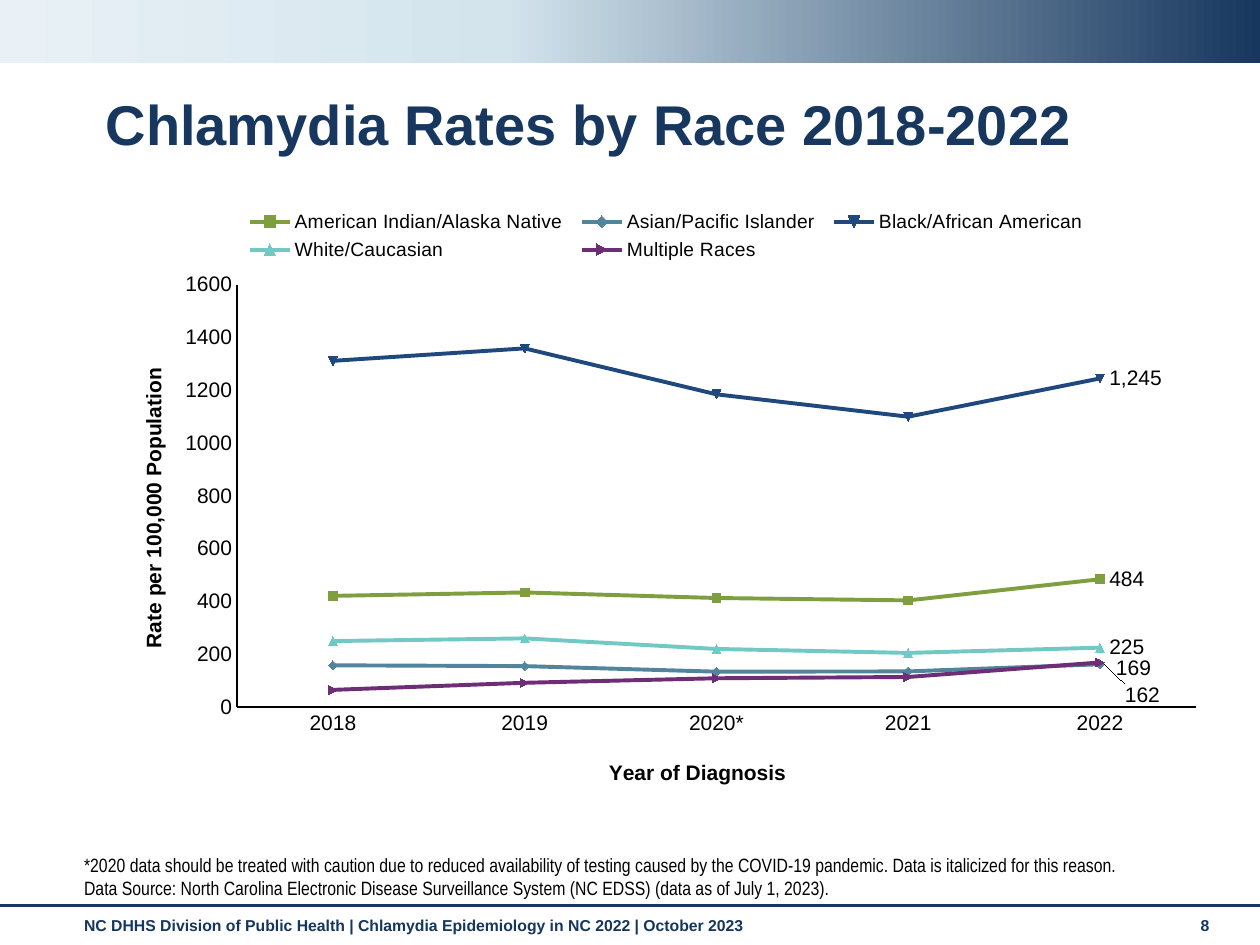
from copy import deepcopy

from lxml import etree
from pptx import Presentation
from pptx.chart.data import CategoryChartData
from pptx.dml.color import RGBColor
from pptx.enum.chart import XL_CHART_TYPE, XL_LABEL_POSITION, XL_LEGEND_POSITION, XL_TICK_MARK
from pptx.enum.shapes import MSO_CONNECTOR, MSO_SHAPE
from pptx.enum.text import MSO_ANCHOR
from pptx.oxml.ns import qn
from pptx.util import Pt

LINE = XL_CHART_TYPE.LINE
RIGHT = XL_LABEL_POSITION.RIGHT
TOP_LEGEND = XL_LEGEND_POSITION.TOP
NO_TICK = XL_TICK_MARK.NONE
TOP, MIDDLE, BOTTOM = MSO_ANCHOR.TOP, MSO_ANCHOR.MIDDLE, MSO_ANCHOR.BOTTOM
NAVY, BLACK = "17375E", "000000"

# Content: text, box (left, top, width, height), font, size, bold, colour, anchor
TEXTS = [
    (["Chlamydia Rates by Race 2018-2022"],
     (53.3, 49, 617.8, 43.2), "Arial", 32, True, NAVY, MIDDLE),
    (["*2020 data should be treated with caution due to reduced availability of testing "
      "caused by the COVID-19 pandemic. Data is italicized for this reason.",
      "Data Source: North Carolina Electronic Disease Surveillance System (NC EDSS) "
      "(data as of July 1, 2023)."],
     (41, 491.8, 655.2, 25.9), "Arial Narrow", 11, False, BLACK, BOTTOM),
    (["NC DHHS Division of Public Health | Chlamydia Epidemiology in NC 2022 | October 2023"],
     (41, 519.8, 629.3, 20.9), "Arial", 9, True, "15365E", TOP),
    (["8"], (679, 519.8, 31.7, 21.6), "Arial", 9, True, "15365E", TOP),
]
BAND_STOPS = [(0, NAVY), (0.6, "D3E4ED"), (1, "E9F1F6")]
YEARS = ["2018", "2019", "2020*", "2021", "2022"]
# Series: name, rates, colour, shift of the end label (fraction of chart)
SERIES = [
    ("American Indian/Alaska Native", (421, 434, 413, 404, 484), "7F9E3F", None),
    ("Asian/Pacific Islander", (158, 155, 134, 135, 162), "52849C", (0.014, 0.05)),
    ("Black/African American", (1311.3, 1358.6, 1184.6, 1099.9, 1244.7), "1F497D", None),
    ("White/Caucasian", (250, 260, 220, 205, 225), "71C9C5", None),
    ("Multiple Races", (65, 92, 109, 114, 169), "6D2E75", (0.006, 0.01)),
]


def rgb(value):
    return RGBColor.from_string(value)


def style(font, size, color=BLACK, bold=False, name="Arial"):
    font.name, font.size, font.bold = name, Pt(size), bold
    font.color.rgb = rgb(color)


def add_text(s, lines, box, name, size, bold, color, anchor):
    tf = s.shapes.add_textbox(*map(Pt, box)).text_frame
    tf.word_wrap = True
    tf.vertical_anchor = anchor
    for i, line in enumerate(lines):
        p = tf.paragraphs[0] if i == 0 else tf.add_paragraph()
        r = p.add_run()
        r.text = line
        style(r.font, size, color, bold, name)


def set_layout(parent, index, x, y, w=None, h=None, mode="edge", inner=False):
    """Give a chart part a manual place, in fractions of the chart."""
    for old in parent.findall(qn("c:layout")):
        parent.remove(old)
    layout = etree.Element(qn("c:layout"))
    manual = etree.SubElement(layout, qn("c:manualLayout"))
    values = [("layoutTarget", "inner" if inner else None),
              ("xMode", mode), ("yMode", mode), ("x", x), ("y", y), ("w", w), ("h", h)]
    for tag, value in values:
        if value is not None:
            etree.SubElement(manual, qn("c:" + tag)).set("val", str(value))
    parent.insert(index, layout)


def style_axis(axis, title, x, y):
    axis.has_major_gridlines = False
    axis.major_tick_mark = axis.minor_tick_mark = NO_TICK
    axis.format.line.color.rgb = rgb(BLACK)
    axis.format.line.width = Pt(0.75)
    style(axis.tick_labels.font, 12)
    r = axis.axis_title.text_frame.paragraphs[0].add_run()
    r.text = title
    style(r.font, 12, bold=True)
    set_layout(axis.axis_title._element, 1, x, y)


def add_rates_chart(s):
    data = CategoryChartData(number_format="#,##0")
    data.categories = YEARS
    for name, rates, _, _ in SERIES:
        data.add_series(name, rates)
    chart = s.shapes.add_chart(LINE, Pt(59), Pt(110.2), Pt(637.2), Pt(349.9), data).chart
    style(chart.font, 10)
    chart.has_title = False
    chart.has_legend = True
    chart.legend.position = TOP_LEGEND
    chart.legend.include_in_layout = False
    style(chart.legend.font, 11)
    set_layout(chart.legend._element, 1, 0.12, 0.02, 0.77, 0.1)

    style_axis(chart.category_axis, "Year of Diagnosis", 0.45, 0.92)
    rate_axis = chart.value_axis
    style_axis(rate_axis, "Rate per 100,000 Population", 0.03, 0.28)
    rate_axis.minimum_scale, rate_axis.maximum_scale, rate_axis.major_unit = 0, 1600, 200
    rate_axis.tick_labels.number_format = "0"
    rate_axis.tick_labels.number_format_is_linked = False

    plot = chart.plots[0]
    plot.vary_by_categories = False
    set_layout(chart._chartSpace.chart.plotArea, 0, 0.12, 0.15, 0.86, 0.69, inner=True)

    # Lines, each labelled at its last year only
    for ser, (_, _, color, shift) in zip(plot.series, SERIES):
        ser.smooth = False
        ser.marker.style = None
        ser.format.line.color.rgb = rgb(color)
        ser.format.line.width = Pt(2.25)
        ser.data_labels.show_value = False
        label = ser.points[len(YEARS) - 1].data_label
        style(label.font, 12)
        label.position = RIGHT
        dlbl = ser._element.find(".//" + qn("c:dLbl"))
        fmt = etree.Element(qn("c:numFmt"), formatCode="#,##0", sourceLinked="0")
        dlbl.insert(1, fmt)
        if shift:
            set_layout(dlbl, 1, *shift, mode="factor")


def add_band(s):
    band = s.shapes.add_shape(MSO_SHAPE.RECTANGLE, 0, 0, Pt(720), Pt(36))
    band.shadow.inherit = False
    band.line.fill.background()
    band.fill.gradient()
    band.fill.gradient_angle = 180
    stop_list = band._element.find(".//" + qn("a:gsLst"))
    stop_list.append(deepcopy(stop_list[-1]))
    for stop, (position, color) in zip(band.fill.gradient_stops, BAND_STOPS):
        stop.position = position
        stop.color.rgb = rgb(color)


def add_footer_rule(s):
    rule = s.shapes.add_connector(MSO_CONNECTOR.STRAIGHT, 0, Pt(517.7), Pt(720), Pt(517.7))
    rule.line.color.rgb = rgb(NAVY)
    rule.line.width = Pt(1.75)
    etree.SubElement(rule._element.spPr, qn("a:effectLst"))


def main():
    prs = Presentation()
    prs.slide_width, prs.slide_height = Pt(720), Pt(540)
    s = prs.slides.add_slide(prs.slide_layouts[6])
    add_band(s)
    add_footer_rule(s)
    for text in TEXTS:
        add_text(s, *text)
    add_rates_chart(s)
    prs.save("out.pptx")


if __name__ == "__main__":
    main()
